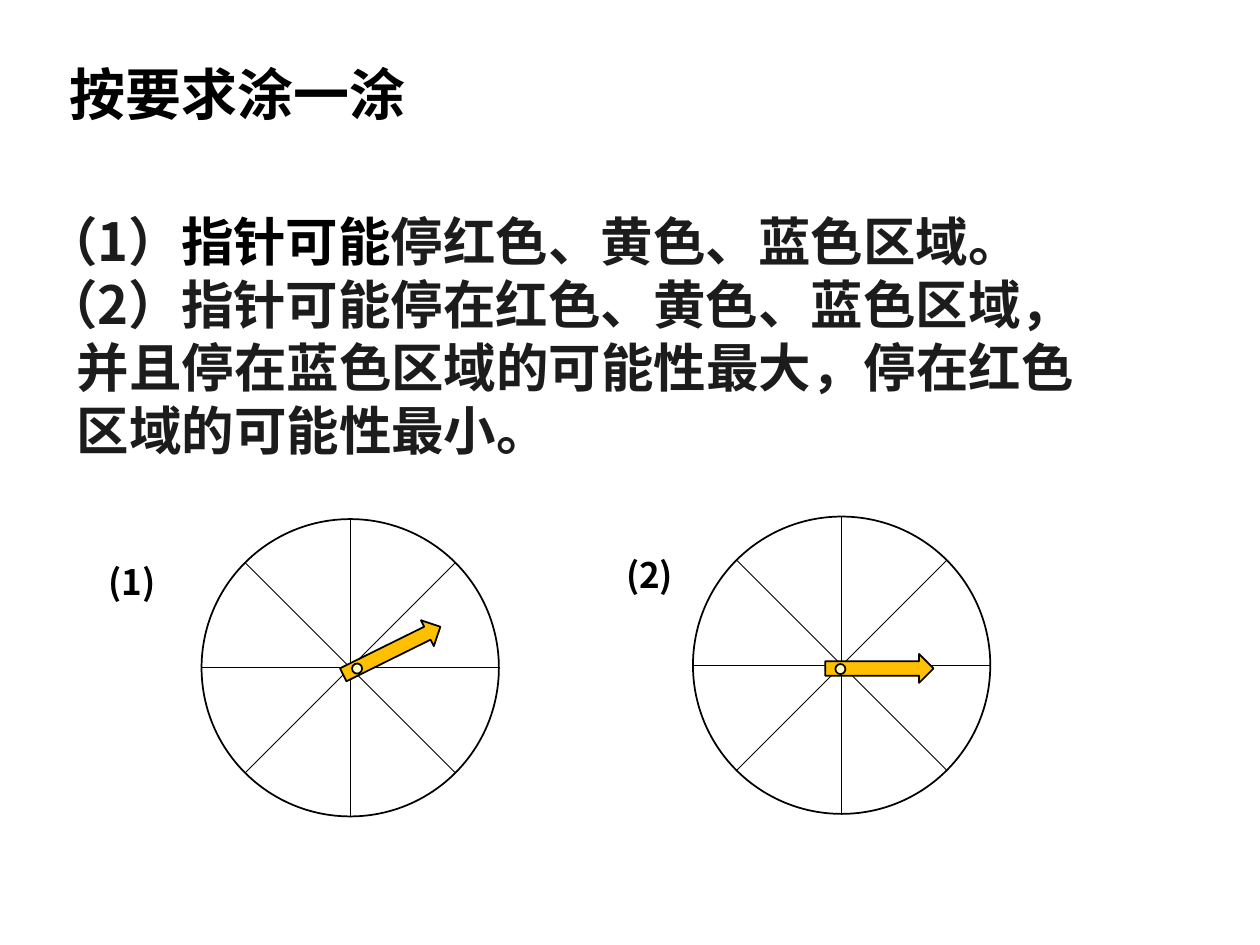
from dataclasses import dataclass
from math import cos, pi, sin

from lxml import etree
from pptx import Presentation
from pptx.dml.color import RGBColor
from pptx.enum.shapes import MSO_CONNECTOR, MSO_SHAPE
from pptx.enum.text import MSO_AUTO_SIZE
from pptx.oxml.ns import qn
from pptx.util import Inches, Pt


@dataclass(frozen=True)
class Theme:
    font: str = "Noto Sans CJK SC"
    title_size: int = 32
    body_size: int = 30
    label_size: int = 20
    black: RGBColor = RGBColor(0x00, 0x00, 0x00)
    body: RGBColor = RGBColor(0x1C, 0x1C, 0x1C)
    pointer: RGBColor = RGBColor(0xFF, 0xC0, 0x00)
    pin: RGBColor = RGBColor(0xFF, 0xFF, 0xCC)
    outline: float = 1
    spoke: float = 0.5


THEME = Theme()
SECTORS = 8
WHEEL_SIZE = 2.36


def style_paragraph(paragraph, size, color):
    font = paragraph.font
    font.name, font.size, font.bold = THEME.font, Pt(size), True
    font.color.rgb = color
    latin = paragraph._p.pPr.find(qn("a:defRPr")).find(qn("a:latin"))
    east_asian = etree.Element(qn("a:ea"), typeface=THEME.font)
    latin.addnext(east_asian)


def add_text_frame(slide, box, wrap=True):
    frame = slide.shapes.add_textbox(*map(Inches, box)).text_frame
    frame.word_wrap = wrap
    frame.auto_size = MSO_AUTO_SIZE.SHAPE_TO_FIT_TEXT
    return frame


def add_line_of_text(slide, box, text, size, wrap=True):
    paragraph = add_text_frame(slide, box, wrap).paragraphs[0]
    paragraph.text = text
    style_paragraph(paragraph, size, THEME.black)


def add_instructions(slide, box, instructions):
    """Each instruction is a list of (text, color) pieces."""
    frame = add_text_frame(slide, box)
    for index, pieces in enumerate(instructions):
        paragraph = frame.add_paragraph() if index else frame.paragraphs[0]
        properties = paragraph._p.get_or_add_pPr()
        properties.set("marL", str(Inches(0.25)))
        properties.set("indent", str(Inches(-0.25)))
        style_paragraph(paragraph, THEME.body_size, THEME.body)
        for text, color in pieces:
            run = paragraph.add_run()
            run.text = text
            if color != THEME.body:
                run.font.color.rgb = color


def add_outlined(shapes, preset, box, fill=None):
    shape = shapes.add_shape(preset, *map(Inches, box))
    shape.shadow.inherit = False
    if fill is None:
        shape.fill.background()
    else:
        shape.fill.solid()
        shape.fill.fore_color.rgb = fill
    shape.line.color.rgb = THEME.black
    shape.line.width = Pt(THEME.outline)
    return shape


def add_spoke(slide, *ends):
    spoke = slide.shapes.add_connector(MSO_CONNECTOR.STRAIGHT, *map(Inches, ends))
    spoke.line.color.rgb = THEME.black
    spoke.line.width = Pt(THEME.spoke)
    etree.SubElement(spoke._element.spPr, qn("a:effectLst"))


def add_pointer(slide, left, top, rotation):
    """An arrow with its pin, turned together."""
    pointer = slide.shapes.add_group_shape()
    add_outlined(pointer.shapes, MSO_SHAPE.RIGHT_ARROW,
                 (left, top, 0.86, 0.23), THEME.pointer)
    add_outlined(pointer.shapes, MSO_SHAPE.OVAL,
                 (left + 0.08, top + 0.08, 0.08, 0.08), THEME.pin)
    pointer.rotation = rotation


def add_wheel(slide, left, top, pointer_offset, rotation):
    add_outlined(slide.shapes, MSO_SHAPE.OVAL, (left, top, WHEEL_SIZE, WHEEL_SIZE))
    radius = WHEEL_SIZE / 2
    center_x, center_y = left + radius, top + radius
    for step in range(SECTORS // 2):
        angle = 2 * pi * step / SECTORS
        dx, dy = radius * cos(angle), radius * sin(angle)
        add_spoke(slide, center_x - dx, center_y - dy, center_x + dx, center_y + dy)
    pointer_x, pointer_y = pointer_offset
    add_pointer(slide, left + pointer_x, top + pointer_y, rotation)


def main():
    presentation = Presentation()
    presentation.slide_width, presentation.slide_height = Inches(10), Inches(7.5)
    slide = presentation.slides.add_slide(presentation.slide_layouts[6])

    add_instructions(slide, (0.26, 1.61, 8.74, 2.1), [
        [("（1）", THEME.body), ("指针可能", THEME.black),
         ("停红色、黄色、蓝色区域。", THEME.body)],
        [("（2）指针可能停在红色、黄色、蓝色区域，并且停在蓝色区域的可能性最大，"
          "停在红色区域的可能性最小。", THEME.body)],
    ])
    add_line_of_text(slide, (0.45, 0.42, 4.14, 0.63), "按要求涂一涂", THEME.title_size)

    add_wheel(slide, 1.6, 4.12, pointer_offset=(1.08, 0.93), rotation=333.7)
    add_wheel(slide, 5.5, 4.1, pointer_offset=(1.05, 1.09), rotation=0)
    for text, left, top in (("(1)", 0.76, 4.4), ("(2)", 4.87, 4.34)):
        add_line_of_text(slide, (left, top, 0.62, 0.43), text, THEME.label_size, wrap=False)

    presentation.save("out.pptx")


if __name__ == "__main__":
    main()
